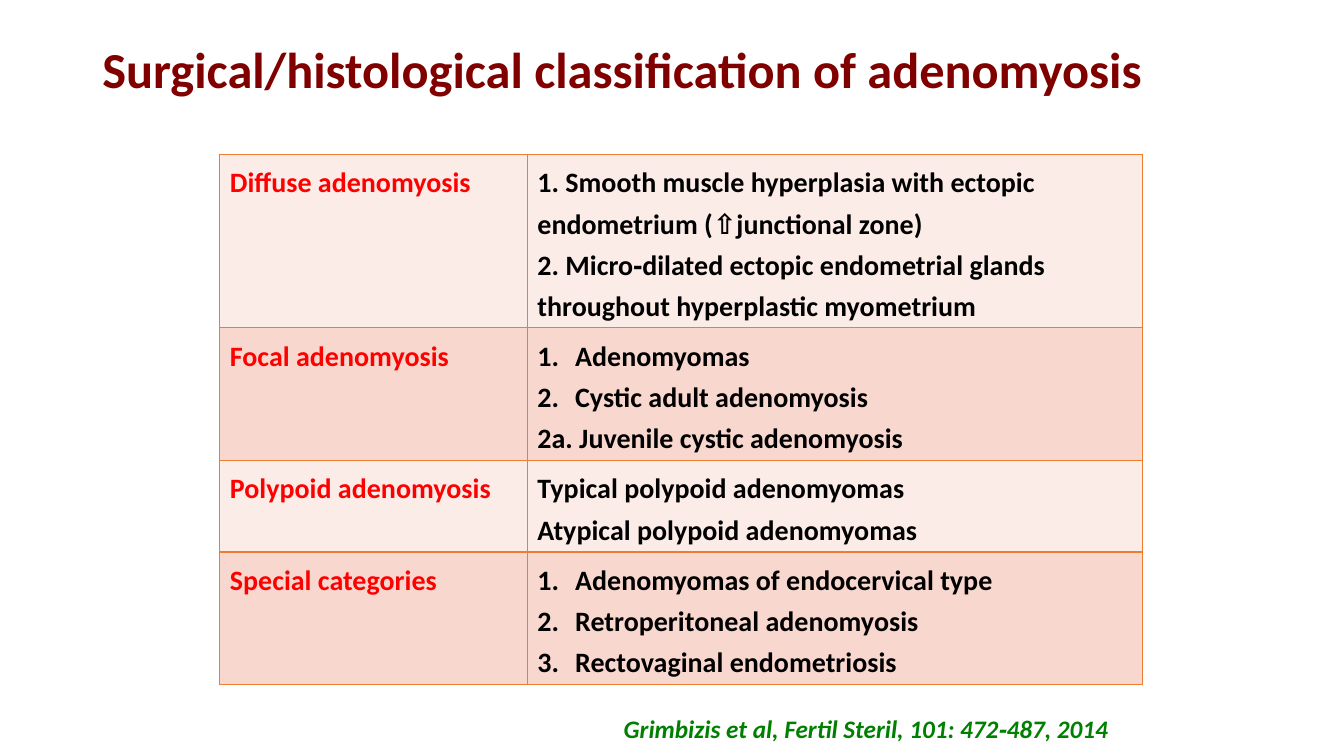
from dataclasses import dataclass

from lxml.etree import SubElement
from pptx import Presentation
from pptx.dml.color import RGBColor as RGB
from pptx.enum.text import MSO_ANCHOR as ANCHOR, PP_ALIGN as ALIGN
from pptx.oxml.ns import qn
from pptx.util import Cm, Pt


@dataclass(frozen=True)
class Theme:
    """Colours, font and type sizes of the slide."""
    font: str = "Calibri"
    title: str = "800000"
    category: str = "FF0000"
    body: str = "000000"
    citation: str = "008000"
    border: str = "ED7D31"
    bands: tuple = ("FCECE8", "F8D7CE")
    title_size: int = 36
    table_size: int = 20
    citation_size: int = 18


THEME = Theme()
LINE_HEIGHT, CELL_PADDING = 1.03, 0.25

# Each row: category, its entries as (text, auto-numbered), and lines of text.
ROWS = [
    ("Diffuse adenomyosis",
     [("1. Smooth muscle hyperplasia with ectopic endometrium (⇧junctional zone)", False),
      ("2. Micro‐dilated ectopic endometrial glands throughout hyperplastic myometrium", False)], 4),
    ("Focal adenomyosis",
     [("Adenomyomas", True),
      ("Cystic adult adenomyosis", True),
      ("2a. Juvenile cystic adenomyosis", False)], 3),
    ("Polypoid adenomyosis",
     [("Typical polypoid adenomyomas", False),
      ("Atypical polypoid adenomyomas", False)], 2),
    ("Special categories",
     [("Adenomyomas of endocervical type", True),
      ("Retroperitoneal adenomyosis", True),
      ("Rectovaginal endometriosis", True)], 3),
]


def write(p, text, *, size, color, italic=False, align=ALIGN.LEFT, spacing=1.0, numbered=False):
    """Write bold text into a paragraph with the given format."""
    p.alignment, p.line_spacing = align, spacing
    if numbered:
        pPr = p._p.get_or_add_pPr()
        pPr.set("marL", str(Cm(0.95)))
        pPr.set("indent", str(-Cm(0.95)))
        SubElement(pPr, qn("a:buFont"), typeface="+mj-lt")
        SubElement(pPr, qn("a:buAutoNum"), type="arabicPeriod")
    r = p.add_run()
    r.text = text
    r.font.name, r.font.size = THEME.font, Pt(size)
    r.font.bold, r.font.italic = True, italic
    r.font.color.rgb = RGB.from_string(color)


def add_text(s, box, text, **fmt):
    """Place a top-anchored line of text in a box."""
    tf = s.shapes.add_textbox(*map(Cm, box)).text_frame
    tf.word_wrap, tf.vertical_anchor = True, ANCHOR.TOP
    write(tf.paragraphs[0], text, **fmt)


def style_cell(cell, fill):
    """Give a cell its border and fill."""
    tcPr = cell._tc.get_or_add_tcPr()
    for side in ("lnL", "lnR", "lnT", "lnB"):
        ln = SubElement(tcPr, qn(f"a:{side}"), w=str(Pt(1)))
        SubElement(SubElement(ln, qn("a:solidFill")), qn("a:srgbClr"), val=THEME.border)
    cell.fill.solid()
    cell.fill.fore_color.rgb = RGB.from_string(fill)


def fill_cell(cell, entries, color):
    """Write one paragraph per entry into a cell."""
    tf = cell.text_frame
    for i, (text, numbered) in enumerate(entries):
        p = tf.add_paragraph() if i else tf.paragraphs[0]
        write(p, text, size=THEME.table_size, color=color, spacing=1.2, numbered=numbered)


def add_classification(s, box):
    """Place the classification table, one third of its width for categories."""
    left, top, width = box
    heights = [lines * LINE_HEIGHT + CELL_PADDING for *_, lines in ROWS]
    frame = s.shapes.add_table(len(ROWS), 2, *map(Cm, (left, top, width, sum(heights))))
    table = frame.table
    table.first_row = table.horz_banding = False
    for column, share in zip(table.columns, (1, 2)):
        column.width = Cm(width * share / 3)
    for i, (category, entries, _) in enumerate(ROWS):
        table.rows[i].height = Cm(heights[i])
        for cell in table.rows[i].cells:
            style_cell(cell, THEME.bands[i % 2])
        fill_cell(table.cell(i, 0), [(category, False)], THEME.category)
        fill_cell(table.cell(i, 1), entries, THEME.body)


def main():
    """Build the slide and save it."""
    prs = Presentation()
    prs.slide_width, prs.slide_height = Cm(33.87), Cm(19.05)
    s = prs.slides.add_slide(prs.slide_layouts[6])
    add_text(s, (2.33, 1.01, 29.21, 3.68), "Surgical/histological classification of adenomyosis",
             size=THEME.title_size, color=THEME.title, spacing=0.9)
    add_classification(s, (5.54, 3.89, 23.25))
    add_text(s, (7.62, 17.86, 20.57, 1.02), "Grimbizis et al, Fertil Steril, 101: 472‐487, 2014",
             size=THEME.citation_size, color=THEME.citation, italic=True, align=ALIGN.RIGHT)
    prs.save("out.pptx")


if __name__ == "__main__":
    main()
